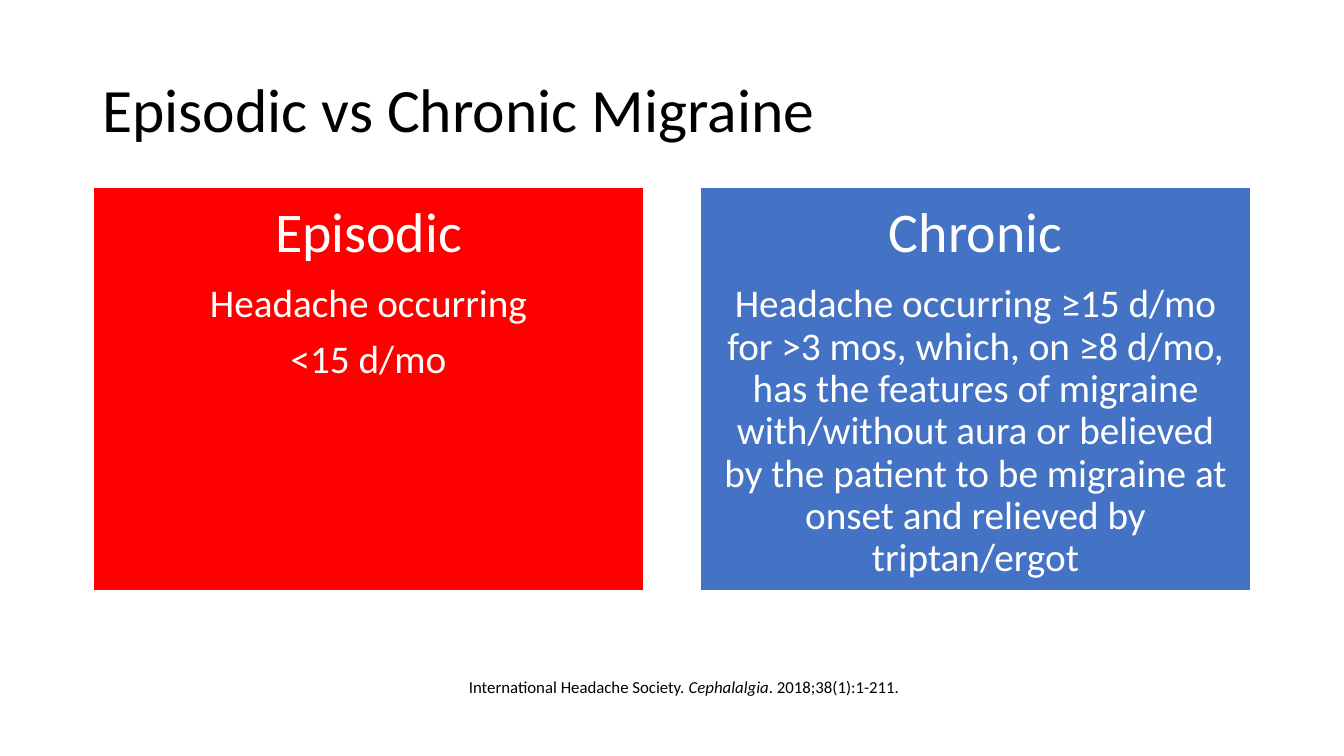
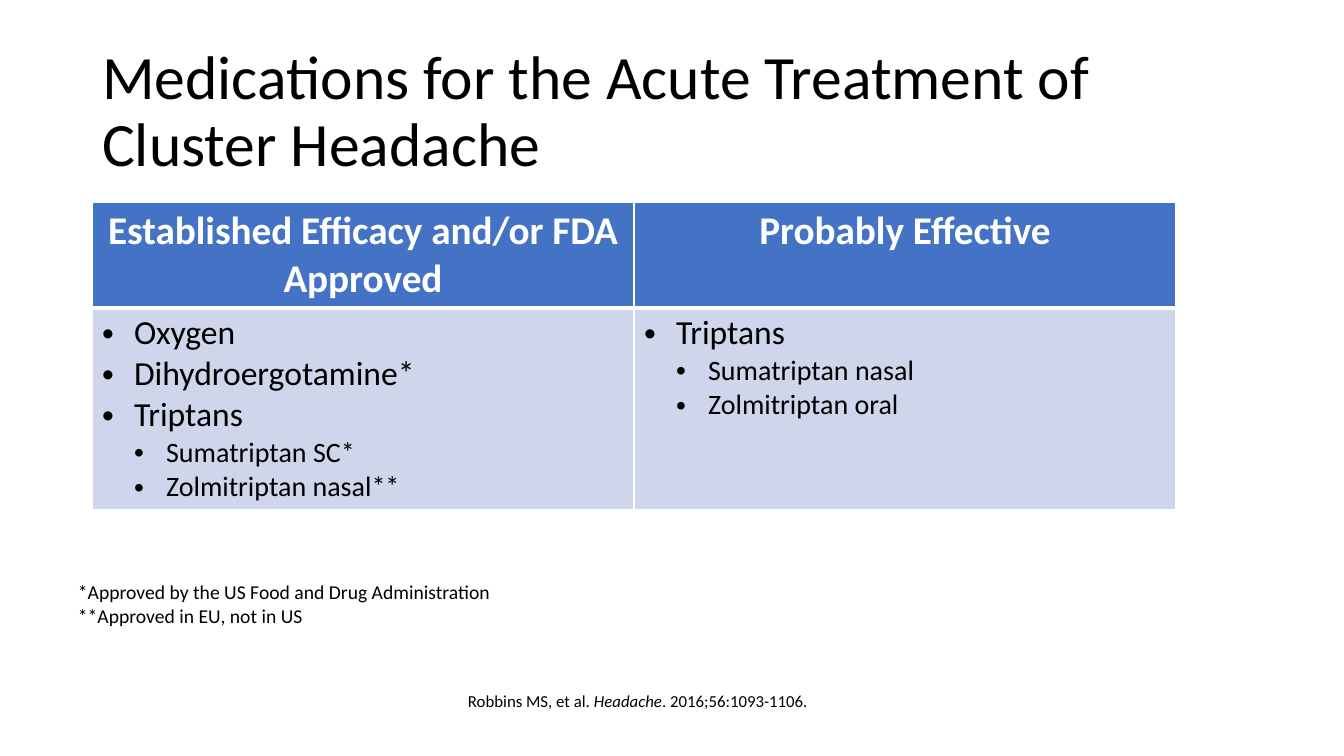
from lxml.etree import SubElement
from pptx import Presentation
from pptx.dml.color import RGBColor
from pptx.enum.shapes import MSO_SHAPE
from pptx.enum.text import MSO_ANCHOR, MSO_AUTO_SIZE, PP_ALIGN
from pptx.oxml.ns import qn
from pptx.util import Emu, Pt

COLORS = {"black": "000000", "white": "FFFFFF", "red": "FF0000",
          "blue": "4472C4", "pale": "CFD5EA"}
FONT = "Calibri"
EMU_PER_PX = 914400 / 100.8
LEFT = 92
TITLE_BOX = (LEFT, 40, 1159, 146)
INDENT = 32

CARD_TITLE = "Episodic vs Chronic Migraine"
CARDS = [
    ("Episodic", ["Headache occurring", "<15 d/mo"], "red"),
    ("Chronic", ["Headache occurring ≥15 d/mo for >3 mos, which, on ≥8 d/mo, has the "
                 "features of migraine with/without aura or believed by the patient to "
                 "be migraine at onset and relieved by triptan/ergot"], "blue"),
]
CARD_TOP, CARD_WIDTH, CARD_HEIGHT, CARD_GAP, CARD_INSET = 187, 551, 404, 56, 17
CARD_SOURCE = ("International Headache Society. ", "Cephalalgia", ". 2018;38(1):1-211.")

TABLE_TITLE = "Medications for the Acute Treatment of Cluster Headache"
# Each column: heading, then (level, item) pairs
COLUMNS = [
    ("Established Efficacy and/or FDA Approved",
     [(0, "Oxygen"), (0, "Dihydroergotamine*"), (0, "Triptans"),
      (1, "Sumatriptan SC*"), (1, "Zolmitriptan nasal**")]),
    ("Probably Effective",
     [(0, "Triptans"), (1, "Sumatriptan nasal"), (1, "Zolmitriptan oral")]),
]
TABLE_TOP, COLUMN_WIDTH, ROW_HEIGHTS = 202, 542, (105, 201)
LEVEL_SIZES = (24, 20)
FOOTNOTES = ["*Approved by the US Food and Drug Administration",
             "**Approved in EU, not in US"]
TABLE_SOURCE = ("Robbins MS, et al. ", "Headache", ". 2016;56:1093-1106.")


def px(length):
    return Emu(round(length * EMU_PER_PX))


def color(name):
    return RGBColor.from_string(COLORS[name])


def style(para, size, ink="black", bold=False, align=PP_ALIGN.LEFT):
    para.alignment = align
    font = para.font
    font.name, font.size, font.bold = FONT, Pt(size), bold
    font.color.rgb = color(ink)


def paragraphs(frame, count):
    """Return the first paragraph of the frame and as many new ones as needed."""
    return [frame.paragraphs[0]] + [frame.add_paragraph() for _ in range(count - 1)]


def add_page(deck, title):
    page = deck.slides.add_slide(deck.slide_layouts[5])
    box = page.shapes.title
    box.left, box.top, box.width, box.height = map(px, TITLE_BOX)
    frame = box.text_frame
    frame.text = title
    frame.vertical_anchor = MSO_ANCHOR.MIDDLE
    frame.auto_size = MSO_AUTO_SIZE.NONE
    para = frame.paragraphs[0]
    para.line_spacing = 0.9
    style(para, 44)
    return page


def add_text_box(page, *area):
    frame = page.shapes.add_textbox(*map(px, area)).text_frame
    frame.word_wrap = True
    return frame


def add_source(page, parts, *area):
    """Add a citation whose middle part, the journal, is in italics."""
    para = add_text_box(page, *area).paragraphs[0]
    style(para, 12)
    for index, part in enumerate(parts):
        span = para.add_run()
        span.text = part
        span.font.italic = index == 1


def add_card(page, left, heading, lines, fill):
    card = page.shapes.add_shape(MSO_SHAPE.RECTANGLE, px(left), px(CARD_TOP),
                                 px(CARD_WIDTH), px(CARD_HEIGHT))
    card.shadow.inherit = False
    card.fill.solid()
    card.fill.fore_color.rgb = color(fill)
    card.line.color.rgb = color("white")
    card.line.width = Pt(1)
    frame = card.text_frame
    frame.word_wrap = True
    frame.vertical_anchor = MSO_ANCHOR.TOP
    frame.margin_left = frame.margin_right = px(CARD_INSET)
    frame.margin_top = frame.margin_bottom = px(CARD_INSET)
    texts = [heading, *lines]
    for index, (para, text) in enumerate(zip(paragraphs(frame, len(texts)), texts)):
        size = 28 if index else 40
        para.text = text
        para.line_spacing = 0.9
        para.space_after = Pt(size * 0.35)
        style(para, size, "white", align=PP_ALIGN.CENTER)


def add_bullet(para, level):
    properties = para._p.get_or_add_pPr()
    properties.set("marL", str(px(INDENT * (level + 1))))
    properties.set("indent", str(-px(INDENT)))
    SubElement(properties, qn("a:buFont"), typeface="Arial")
    SubElement(properties, qn("a:buChar"), char="•")


def format_cell(cell, fill, thick_side):
    """Give the cell white borders, 3 pt on one side, and then its fill."""
    properties = cell._tc.get_or_add_tcPr()
    for side in ("lnL", "lnR", "lnT", "lnB"):
        width = Pt(3 if side == thick_side else 1)
        line = SubElement(properties, qn(f"a:{side}"), w=str(width))
        paint = SubElement(line, qn("a:solidFill"))
        SubElement(paint, qn("a:srgbClr"), val=COLORS["white"])
    cell.fill.solid()
    cell.fill.fore_color.rgb = color(fill)


def add_medication_table(page):
    table = page.shapes.add_table(
        len(ROW_HEIGHTS), len(COLUMNS), px(LEFT), px(TABLE_TOP),
        px(COLUMN_WIDTH * len(COLUMNS)), px(sum(ROW_HEIGHTS))).table
    for row, height in zip(table.rows, ROW_HEIGHTS):
        row.height = px(height)
    for index, (heading, items) in enumerate(COLUMNS):
        table.columns[index].width = px(COLUMN_WIDTH)
        head, body = table.cell(0, index), table.cell(1, index)
        format_cell(head, "blue", "lnB")
        format_cell(body, "pale", "lnT")
        head.text = heading
        style(head.text_frame.paragraphs[0], 28, "white", True, PP_ALIGN.CENTER)
        for para, (level, item) in zip(paragraphs(body.text_frame, len(items)), items):
            para.text = item
            add_bullet(para, level)
            style(para, LEVEL_SIZES[level])


def main():
    deck = Presentation()
    deck.slide_width, deck.slide_height = px(1344), px(756)

    page = add_page(deck, CARD_TITLE)
    for index, card in enumerate(CARDS):
        add_card(page, LEFT + 1 + index * (CARD_WIDTH + CARD_GAP), *card)
    add_source(page, CARD_SOURCE, 459, 672, 456, 30)

    page = add_page(deck, TABLE_TITLE)
    add_medication_table(page)
    add_source(page, TABLE_SOURCE, 458, 686, 643, 30)
    notes = add_text_box(page, 68, 575, 747, 57)
    for para, text in zip(paragraphs(notes, len(FOOTNOTES)), FOOTNOTES):
        para.text = text
        style(para, 14)

    deck.save("out.pptx")


if __name__ == "__main__":
    main()
